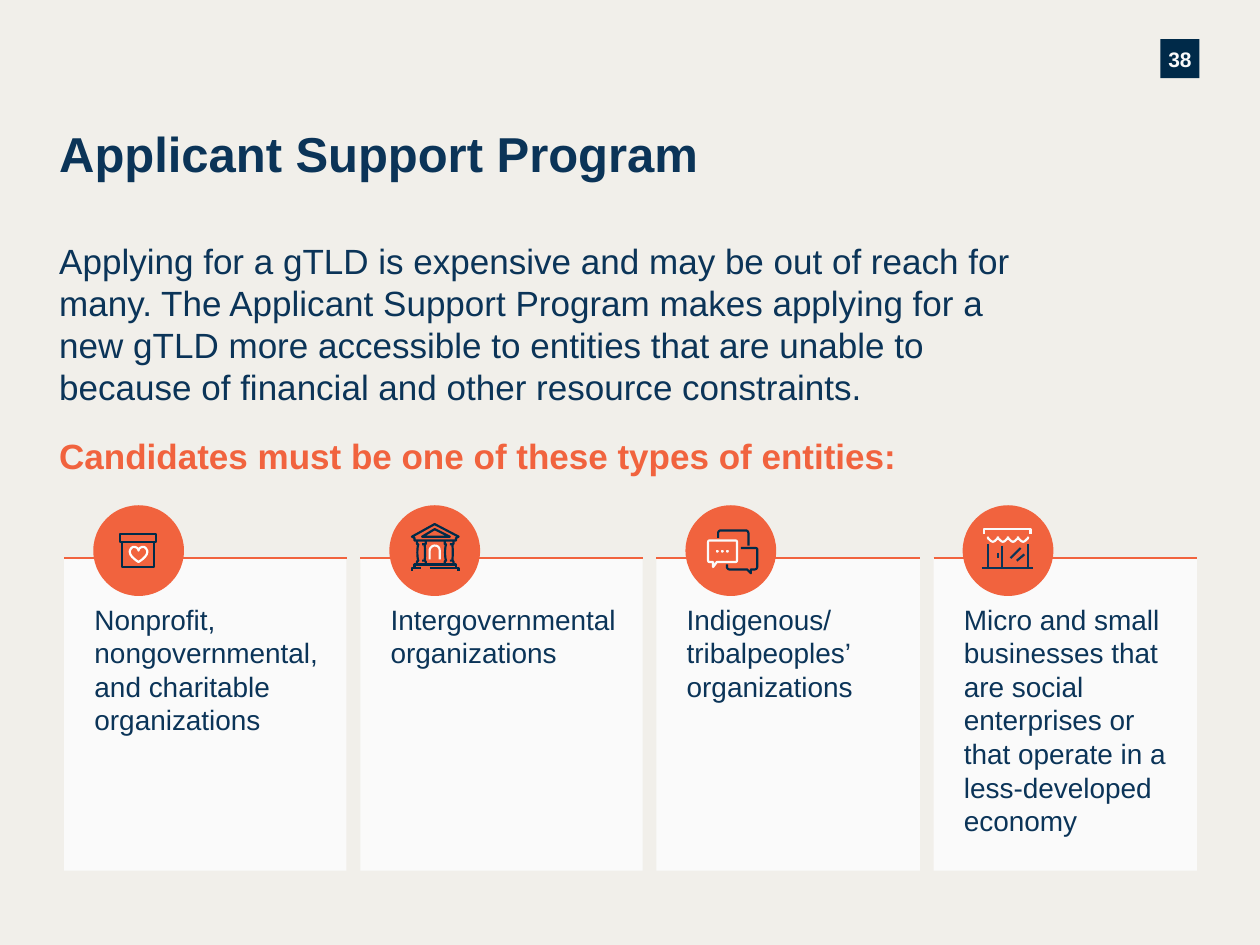
from pptx import Presentation
from pptx.dml.color import RGBColor as RGB
from pptx.enum.shapes import MSO_CONNECTOR as LINE, MSO_SHAPE as SHAPE
from pptx.enum.text import MSO_ANCHOR as ANCHOR, PP_ALIGN as ALIGN
from pptx.oxml.ns import qn
from pptx.util import Inches, Pt
from lxml.etree import SubElement as Sub

NAVY, DEEP, ORANGE = "0B3458", "002B49", "F1633E"
PAPER, SAND, WHITE = "FAFAFA", "F1EFEA", "FFFFFF"
RULE, DISC = 4.43, 4.01  # heights of the card rule and the icon disc

# Icon strokes: (colour, nodes) in hundredths of an inch from the disc corner.
# A pair is a straight step, six numbers are a Bezier curve.
BOX = [
    (DEEP, [(21, 23), (50, 23), (50, 29), (21, 29), (21, 23)]),
    (DEEP, [(23, 29), (48, 29), (48, 49), (23, 49), (23, 29)]),
    (WHITE, [(36, 45), (36, 45, 43, 41, 43, 37), (43, 35, 41, 33, 40, 33),
             (37, 33, 36, 35, 36, 36), (36, 35, 35, 33, 32, 33),
             (31, 33, 29, 35, 29, 37), (29, 41, 36, 45, 36, 45)]),
]


def pillar(x):
    return [
        (DEEP, [(x + 6, 31), (x + 6.5, 34, x + 6.5, 41, x + 6, 44)]),
        (DEEP, [(x + 4, 31), (x + 6, 31),
                (x + 6.5, 31, x + 7, 31, x + 7, 30), (x + 7, 28)]),
        (DEEP, [(x + 4, 44), (x + 6, 44),
                (x + 6.5, 44, x + 7, 45, x + 7, 45), (x + 7, 47)]),
        (DEEP, [(x, 47), (x, 45), (x, 45, x, 44, x + 1, 44),
                (x, 41, x, 34, x + 1, 31), (x, 31, x, 31, x, 30), (x, 28)]),
    ]


BANK = [
    (DEEP, [(32, 50), (55, 50), (55, 52)]),
    (DEEP, [(18, 52), (18, 50), (25, 50)]),
    (DEEP, [(20, 50), (20, 47), (53, 47), (53, 50)]),
    (PAPER, [(32, 43), (32, 36), (32, 34, 34, 32, 36, 32),
             (39, 32, 40, 34, 40, 36), (40, 43)]),
    *pillar(22), *pillar(44),
    (DEEP, [(36, 19), (26, 25), (48, 25), (36, 19)]),
    (DEEP, [(53, 28), (20, 28), (20, 26), (18, 25), (36, 15), (55, 25),
            (53, 26), (53, 28)]),
]

CHAT = [
    (PAPER, [(40, 28), (19, 28), (18, 28, 18, 29, 18, 30), (18, 43),
             (18, 44, 18, 45, 19, 45), (22, 45), (22, 49), (25, 45), (40, 45),
             (41, 45, 41, 44, 41, 43), (41, 30), (41, 29, 41, 28, 40, 28)]),
    (DEEP, [(33, 47), (33, 49), (33, 50, 34, 51, 35, 51), (49, 51), (52, 54),
            (52, 51), (55, 51), (56, 51, 57, 50, 57, 49), (57, 35),
            (57, 34, 56, 34, 55, 34), (44, 34)]),
    (DEEP, [(26, 26), (26, 22), (26, 21, 27, 20, 28, 20), (48, 20),
            (49, 20, 50, 21, 50, 22), (50, 32)]),
    *[(PAPER, [(x, 36.5), (x + 0.3, 36.8), (x + 0.6, 36.5),
               (x + 0.3, 36.2), (x, 36.5)]) for x in (25, 29, 33)],
]

SHOP = [
    *[(NAVY, ends) for ends in (
        [(20, 31), (20, 50)], [(31, 32), (31, 50)], [(52, 31), (52, 50)],
        [(28, 38), (28, 42)], [(15, 50), (56, 50)],
        [(46, 34), (38, 42)], [(49, 39), (43, 44)])],
    *[(PAPER, [(x + 8, 25), (x + 8, 26, x + 7.5, 27, x + 7, 27),
               (x + 6, 28, x + 5, 29, x + 4, 29),
               (x + 3, 29, x + 2, 28, x + 1, 27), (x + 0.5, 27, x, 26, x, 25)])
      for x in range(20, 52, 8)],
    (PAPER, [(17, 23), (17, 19), (54, 19), (54, 23)]),
]

# Cards: left, width, text, icon
CARDS = [
    (0.51, 2.24, "Nonprofit,\nnongovernmental,\vand charitable organizations", BOX),
    (2.86, 2.24, "Intergovernmental organizations", BANK),
    (5.21, 2.09, "Indigenous/\vtribalpeoples’ organizations", CHAT),
    (7.41, 2.09, "Micro and small businesses that are social enterprises "
                 "or that operate in a less-developed economy", SHOP),
]


def hue(code):
    return RGB.from_string(code)


def write(shape, text, size, color, bold=False, pad=(0, 0, 0, 0), **para):
    frame = shape.text_frame
    frame.word_wrap = True
    for side, gap in zip(("left", "top", "right", "bottom"), pad):
        setattr(frame, "margin_" + side, Inches(gap))
    frame.text = text
    for part in frame.paragraphs:
        for key, val in {"alignment": ALIGN.LEFT, **para}.items():
            setattr(part, key, val)
        for run in part.runs:
            for key, val in {"name": "Arial", "size": Pt(size), "bold": bold}.items():
                setattr(run.font, key, val)
            run.font.color.rgb = hue(color)


def label(slide, box, text, size, color, bold=False):
    write(slide.shapes.add_textbox(*map(Inches, box)), text, size, color, bold)


def solid(slide, kind, box, fill):
    shape = slide.shapes.add_shape(kind, *map(Inches, box))
    shape.shadow.inherit = False
    shape.fill.solid()
    shape.fill.fore_color.rgb = hue(fill)
    shape.line.fill.background()
    shape.text_frame.vertical_anchor = ANCHOR.TOP
    return shape


def ink(shape, color):
    shape.line.color.rgb = hue(color)
    shape.line.width = Pt(1.25)


def rule(shapes, start, end, color):
    line = shapes.add_connector(LINE.STRAIGHT, *map(Inches, (*start, *end)))
    ink(line, color)
    Sub(line._element.spPr, qn("a:effectLst"))


def trace(nodes, steps=6):
    """Turn nodes into plain points, sampling each curve."""
    pts = [nodes[0]]
    for node in nodes[1:]:
        if len(node) == 2:
            pts.append(node)
            continue
        hull = [pts[-1], node[:2], node[2:4], node[4:]]
        for i in range(1, steps + 1):
            t = i / steps
            mix = ((1 - t) ** 3, 3 * t * (1 - t) ** 2, 3 * t * t * (1 - t), t ** 3)
            pts.append(tuple(sum(m * p[k] for m, p in zip(mix, hull)) for k in (0, 1)))
    return pts


def stroke(shapes, left, top, color, nodes):
    pts = [(left + x / 100, top + y / 100) for x, y in trace(nodes)]
    if len(pts) == 2:
        rule(shapes, *pts, color)
        return
    pens = [(Inches(x), Inches(y)) for x, y in pts]
    loop = pens[0] == pens[-1]
    pen = shapes.build_freeform(*pens[0])
    pen.add_line_segments(pens[1:-1] if loop else pens[1:], close=loop)
    shape = pen.convert_to_shape()
    shape.shadow.inherit = False
    shape.fill.background()
    ink(shape, color)


def card(slide, left, width, text, icon):
    panel = solid(slide, SHAPE.RECTANGLE, (left, RULE, width, 2.48), PAPER)
    write(panel, text, 16, NAVY, pad=(0.24, 0.35, 0.16, 0.2))
    rule(slide.shapes, (left, RULE), (left + width, RULE), ORANGE)
    disc = left + 0.23
    solid(slide, SHAPE.OVAL, (disc, DISC, 0.72, 0.72), ORANGE)
    group = slide.shapes.add_group_shape()
    for color, nodes in icon:
        stroke(group.shapes, disc, DISC, color, nodes)


def main():
    deck = Presentation()
    deck.slide_width, deck.slide_height = Inches(10), Inches(7.5)
    slide = deck.slides.add_slide(deck.slide_layouts[6])
    slide.background.fill.solid()
    slide.background.fill.fore_color.rgb = hue(SAND)

    # Page number
    badge = solid(slide, SHAPE.RECTANGLE, (9.21, 0.31, 0.31, 0.31), "002A49")
    badge.text_frame.vertical_anchor = ANCHOR.MIDDLE
    write(badge, "38", 12, PAPER, True, alignment=ALIGN.CENTER, line_spacing=1.08)

    # Heading and introduction
    label(slide, (0.47, 0.98, 5.5, 0.55), "Applicant Support Program", 28, NAVY, True)
    label(slide, (0.47, 1.9, 7.71, 1.49),
          "Applying for a gTLD is expensive and may be out of reach for many. "
          "The Applicant Support Program makes applying for a new gTLD more "
          "accessible to entities that are unable to because of financial and "
          "other resource constraints.", 20, NAVY)
    label(slide, (0.47, 3.45, 7.77, 0.43),
          "Candidates must be one of these types of entities:", 20, ORANGE, True)

    # Entity cards
    for item in CARDS:
        card(slide, *item)
    deck.save("out.pptx")


if __name__ == "__main__":
    main()
